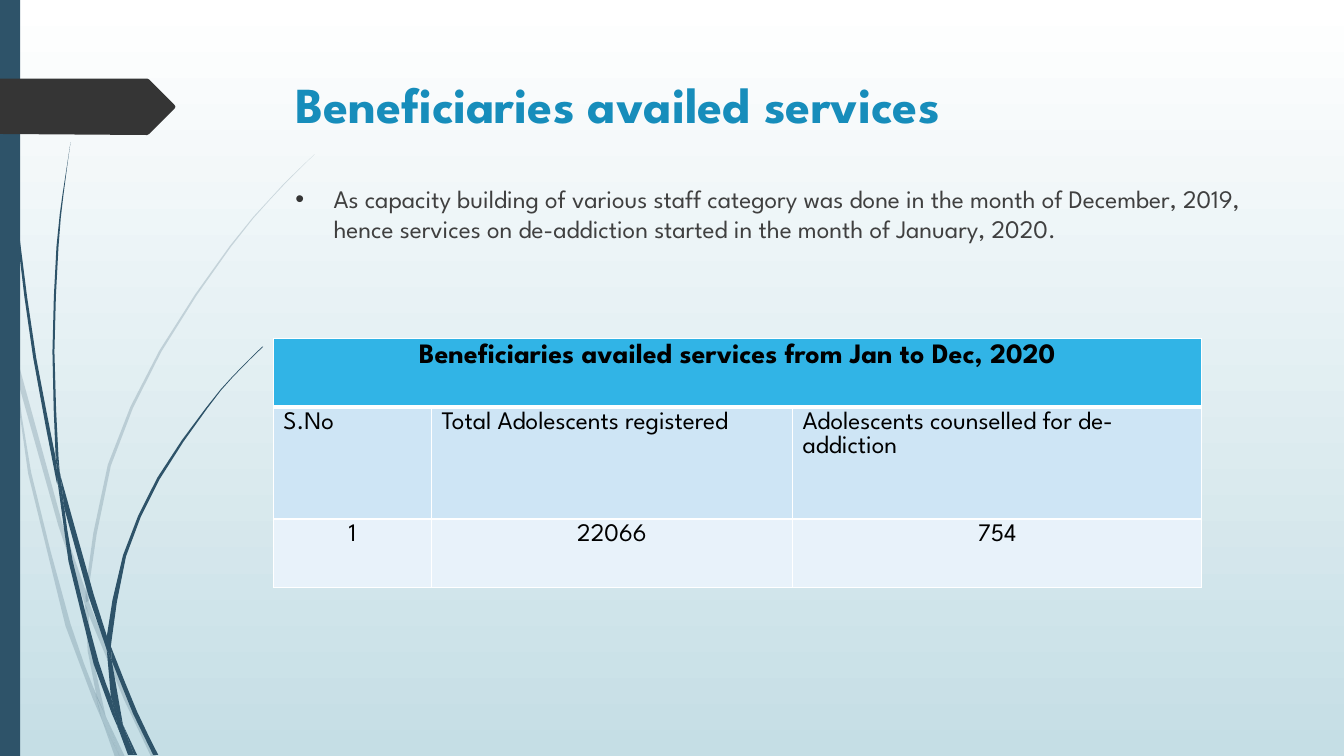
from pptx import Presentation, util as u
from pptx.dml.color import RGBColor
from pptx.enum import shapes, text
from pptx.oxml import parse_xml
from pptx.oxml.ns import nsdecls, qn
from lxml import etree

# Content
HEAD = "Beneficiaries availed services"
NOTE = ("As capacity building of various staff category was done in the month of "
        "December, 2019, hence services on de-addiction started in the month of "
        "January, 2020.")
CAP = "Beneficiaries availed services from Jan to Dec, 2020"
ROWS = [
    (CAP, "", ""),
    ("S.No", "Total Adolescents registered", "Adolescents counselled for de-addiction"),
    ("1", "22066", "754"),
]
COLS = (1.57, 3.58, 4.06)
HIGHS = (0.68, 1.11, 0.68)
FILLS = ("cap", "band", "pale")
FONT = "League Spartan"
HEX = {"navy": "2E5369", "tag": "353535", "title": "178DBB", "body": "404040",
       "cap": "31B4E6", "band": "CEE5F5", "pale": "E8F2FA", "black": "000000",
       "white": "FFFFFF", "mist": "C5DEE5"}
WIDE, HIGH = 13.33, 7.5

# Grass: each piece is one edge going down and one coming back up
PALE = [
    ([(0, 2.82), (0.09, 3.22), (0.11, 3.5)], [(0.1, 3.44), (0, 2.99)]),
    ([(0.14, 3.45), (0.62, 5.2), (0.85, 5.86)],
     [(0.84, 5.99), (0.58, 5.22), (0.17, 3.76)]),
    ([(0.88, 5.96), (0.92, 6.07), (1.27, 6.92), (1.55, 7.51)],
     [(1.5, 7.51), (1.23, 6.94), (0.88, 6.1)]),
    ([(1.05, 7.11), (1.24, 7.51)], [(1.19, 7.51)]),
    ([(0.11, 3.5), (0.17, 3.76), (0.31, 4.69), (0.7, 6.19), (0.93, 6.83), (1.01, 7.14)],
     [(0.92, 6.93), (0.65, 6.21), (0.28, 4.7)]),
    ([(0.84, 5.99), (0.88, 6.1), (0.91, 6.46), (1.05, 7.11)],
     [(0.96, 6.92), (0.87, 6.46)]),
    ([(3.12, 1.53), (2.89, 1.75), (2.68, 1.97), (2.28, 2.44), (1.58, 3.48), (1.07, 4.61),
      (0.85, 5.84), (0.88, 5.96)],
     [(0.88, 5.84), (1.1, 4.62), (1.6, 3.49), (2.29, 2.45), (2.68, 1.98), (2.9, 1.75)]),
    ([(1.01, 7.14), (1.19, 7.51)], [(1.14, 7.51)]),
    ([(0.85, 5.86), (0.88, 5.96), (0.88, 6.1)], [(0.84, 5.99)]),
    ([(0.93, 6.83), (1.05, 7.11), (1.19, 7.51)], [(1.01, 7.14)]),
]
DARK = [
    ([(0.04, 0), (0.05, 0.48), (0.08, 1.09), (0.19, 2.32), (0.36, 3.55), (0.55, 4.53),
      (0.57, 4.81)],
     [(0.56, 4.77), (0.33, 3.55), (0.17, 2.33), (0.07, 1.1), (0.04, 0.48), (0.03, 0)]),
    ([(0.6, 4.72), (0.93, 5.9), (1.06, 6.31), (1.06, 6.45)],
     [(0.88, 5.92), (0.64, 5.05)]),
    ([(1.1, 6.41), (1.13, 6.49), (1.36, 7.06), (1.57, 7.49)],
     [(1.52, 7.49), (1.32, 7.08), (1.11, 6.56)]),
    ([(0.57, 4.77), (0.64, 5.05), (0.72, 5.56), (0.98, 6.57), (1.1, 6.91), (1.17, 7.22)],
     [(1.11, 7.08), (0.93, 6.59), (0.68, 5.57)]),
    ([(0.7, 1.41), (0.63, 1.93), (0.58, 2.45), (0.54, 3.49), (0.58, 4.53), (0.6, 4.72)],
     [(0.55, 4.49), (0.52, 3.49), (0.56, 2.45), (0.62, 1.93)]),
    ([(1.22, 7.19), (1.36, 7.49)], [(1.33, 7.49)]),
    ([(0.55, 4.49), (0.6, 4.72), (0.64, 5.05)], [(0.57, 4.77)]),
    ([(2.6, 3.44), (2.31, 3.73), (2.04, 4.05), (1.56, 4.74), (1.22, 5.51), (1.06, 6.31),
      (1.1, 6.41)],
     [(1.11, 6.33), (1.25, 5.52), (1.58, 4.76), (2.05, 4.06), (2.31, 3.74), (2.61, 3.44)]),
    ([(1.17, 7.22), (1.31, 7.49)], [(1.27, 7.49)]),
    ([(1.06, 6.45), (1.11, 6.56), (1.22, 7.19)], [(1.16, 7.06), (1.1, 6.91)]),
    ([(1.06, 6.31), (1.1, 6.41), (1.11, 6.56)], [(1.06, 6.45)]),
    ([(1.1, 6.91), (1.22, 7.19), (1.33, 7.49)], [(1.3, 7.49), (1.17, 7.22)]),
]
TAG = [(0, 0.78), (1.46, 0.78), (1.48, 0.79), (1.73, 1.04), (1.74, 1.06), (1.73, 1.08),
       (1.48, 1.33), (1.46, 1.34), (0, 1.33)]


def rgb(key):
    return RGBColor.from_string(HEX[key])


def box(*at):
    return [u.Inches(n) for n in at]


def paint(shape, key):
    shape.shadow.inherit = False
    shape.fill.solid()
    shape.fill.fore_color.rgb = rgb(key)
    shape.line.fill.background()


def style(para, size, key, bold=False):
    for run in para.runs:
        font = run.font
        font.name, font.size, font.bold = FONT, u.Pt(size), bold
        font.color.rgb = rgb(key)


def curve(pts):
    """Add a smooth midpoint between neighbours on a long edge."""
    if len(pts) < 4:
        return pts
    ends = [pts[0], *pts, pts[-1]]
    out = [pts[0]]
    for a, b, c, d in zip(ends, ends[1:], ends[2:], ends[3:]):
        out += [tuple((9 * (q + r) - p - s) / 16 for p, q, r, s in zip(a, b, c, d)), c]
    return out


def trace(slide, pts, key):
    pts = [box(*pt) for pt in pts]
    pen = slide.shapes.build_freeform(*pts[0])
    pen.add_line_segments(pts[1:], close=True)
    shape = pen.convert_to_shape()
    paint(shape, key)
    return shape


def edge(cell, side, width):
    line = parse_xml(
        f'<a:{side} {nsdecls("a")} w="{u.Pt(width)}"><a:solidFill>'
        f'<a:srgbClr val="{HEX["white"]}"/></a:solidFill></a:{side}>')
    props = cell._tc.get_or_add_tcPr()
    props.insert(len(props.findall("*")) - 1, line)  # ahead of the fill


def scene(slide):
    back = slide.background.fill
    back.gradient()
    back.gradient_angle = 270
    for stop, key, at in zip(back.gradient_stops, ("white", "mist"), (0, 1)):
        stop.color.rgb, stop.position = rgb(key), at
    for alpha, blades in ((20, PALE), (100, DARK)):
        for down, up in blades:
            blade = trace(slide, curve(down) + curve(up), "navy")
            if alpha < 100:
                tint = blade._element.spPr.find(".//" + qn("a:srgbClr"))
                etree.SubElement(tint, qn("a:alpha"), val=str(alpha * 1000))
    bar = slide.shapes.add_shape(shapes.MSO_SHAPE.RECTANGLE, *box(0, 0, 0.2, HIGH))
    paint(bar, "navy")
    trace(slide, TAG, "tag")


def words(slide):
    title = slide.shapes.title
    title.left, title.top, title.width, title.height = box(2.83, 0.68, 9.75, 1.4)
    frame = title.text_frame
    frame.text = HEAD
    frame.vertical_anchor = text.MSO_ANCHOR.TOP
    para = frame.paragraphs[0]
    para.alignment = text.PP_ALIGN.LEFT
    style(para, 36, "title", True)

    frame = slide.shapes.add_textbox(*box(2.83, 1.77, 9.75, 4.7)).text_frame
    frame.word_wrap = True
    frame.text = NOTE
    para = frame.paragraphs[0]
    para.space_before = u.Pt(10)
    style(para, 18, "body")
    props = para._p.get_or_add_pPr()
    props.set("marL", str(u.Inches(0.38)))
    props.set("indent", str(u.Inches(-0.38)))
    for mark in (f'<a:buClr {nsdecls("a")}><a:srgbClr val="{HEX["tag"]}"/></a:buClr>',
                 f'<a:buFont {nsdecls("a")} typeface="Arial"/>',
                 f'<a:buChar {nsdecls("a")} char="•"/>'):
        props.append(parse_xml(mark))


def grid(slide):
    table = slide.shapes.add_table(
        len(ROWS), len(COLS), *box(2.71, 3.36, sum(COLS), sum(HIGHS))).table
    for col, width in zip(table.columns, COLS):
        col.width = u.Inches(width)
    for r, (row, high, key) in enumerate(zip(ROWS, HIGHS, FILLS)):
        table.rows[r].height = u.Inches(high)
        for c, word in enumerate(row):
            cell = table.cell(r, c)
            cell.text = word
            cell.fill.solid()
            cell.fill.fore_color.rgb = rgb(key)
            for side in ("lnL", "lnR", "lnT", "lnB"):
                thick = (r, side) in ((0, "lnB"), (1, "lnT"))
                edge(cell, side, 3 if thick else 1)
            para = cell.text_frame.paragraphs[0]
            para.alignment = text.PP_ALIGN.LEFT if r == 1 else text.PP_ALIGN.CENTER
            style(para, 18 if r else 20, "black", r == 0)
    table.cell(0, 0).merge(table.cell(0, len(COLS) - 1))


def main():
    deck = Presentation()
    deck.slide_width, deck.slide_height = box(WIDE, HIGH)
    slide = deck.slides.add_slide(deck.slide_layouts[5])
    scene(slide)
    words(slide)
    grid(slide)
    deck.save("out.pptx")


if __name__ == "__main__":
    main()
